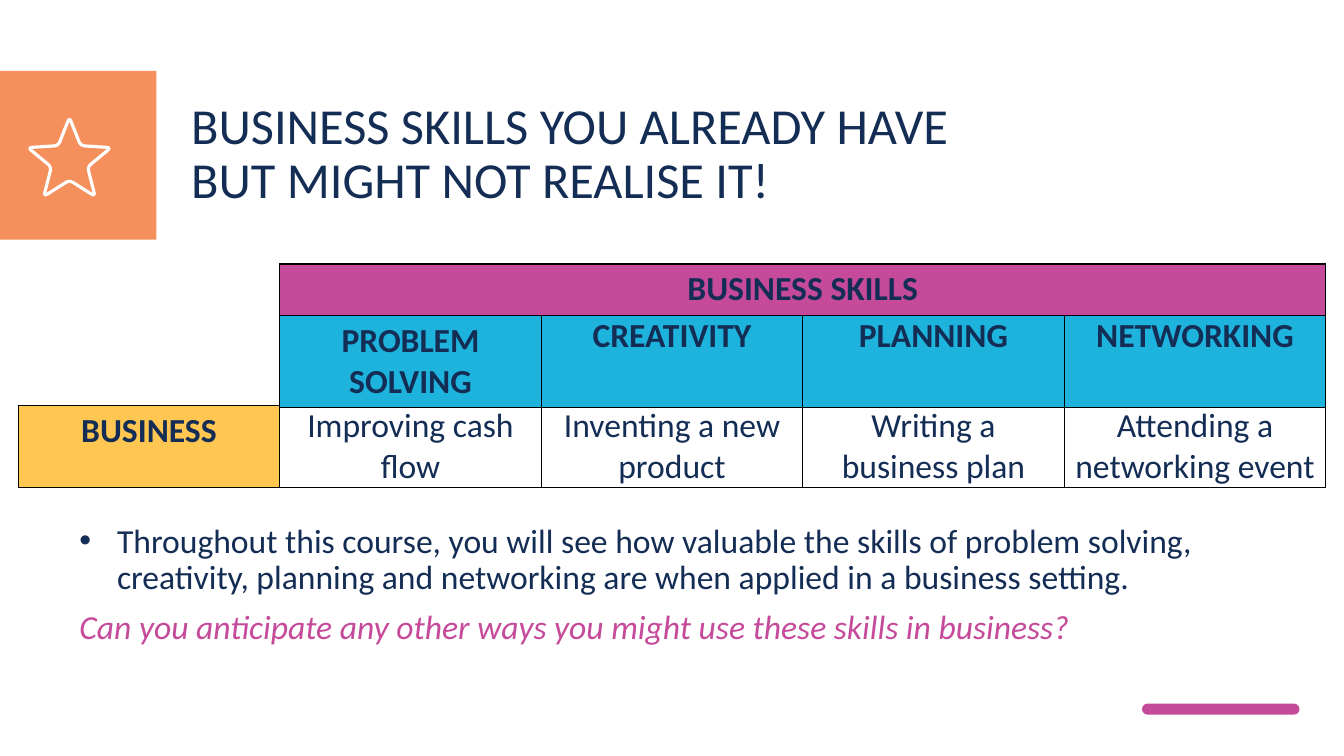
"""Build the slide on business skills you already have."""
from math import cos, pi, sin

from lxml import etree
from pptx import Presentation
from pptx.dml.color import RGBColor
from pptx.enum.shapes import MSO_SHAPE
from pptx.enum.text import PP_ALIGN
from pptx.oxml.ns import qn
from pptx.util import Cm, Pt

RECT, ROUND = MSO_SHAPE.RECTANGLE, MSO_SHAPE.ROUNDED_RECTANGLE
CENTER = PP_ALIGN.CENTER
NAVY, PINK, BLUE, YELLOW, ORANGE = "142D55", "C54A9A", "1EB3DD", "FFC652", "F26B27"
COL = 6.59


def color(text):
    return RGBColor.from_string(text)


def style(par, text, size, tint=NAVY):
    par.text = text
    font = par.font
    font.name, font.size = "Calibri", Pt(size)
    font.color.rgb = color(tint)


deck = Presentation()
deck.slide_width, deck.slide_height = Cm(33.87), Cm(19.05)
slide = deck.slides.add_slide(deck.slide_layouts[6])
shapes = slide.shapes

bars = []
for kind, tint, box in (
    (RECT, ORANGE, (-0.03, 1.79, 3.97, 4.25)),
    (ROUND, PINK, (28.78, 17.73, 3.97, 0.28)),
):
    bar = shapes.add_shape(kind, *map(Cm, box))
    bar.shadow.inherit = False
    bar.fill.solid()
    bar.fill.fore_color.rgb = color(tint)
    bar.line.fill.background()
    bars.append(bar)
bars[1].adjustments[0] = 0.5
tone = bars[0].fill._xPr.find(".//" + qn("a:srgbClr"))
etree.SubElement(tone, qn("a:alpha"), val="75000")

tips = []
for i in range(10):
    size, turn = (0.48 if i % 2 else 1.1), i * pi / 5
    tips.append((1.75 + size * sin(turn), 4.06 - size * cos(turn)))
curve = []
for i, tip in enumerate(tips):
    ends = [
        [0.85 * a + 0.15 * b for a, b in zip(tip, near)]
        for near in (tips[i - 1], tips[(i + 1) % 10])
    ]
    for step in range(7):
        t = step / 6
        curve.append(tuple(
            Cm((1 - t) ** 2 * a + 2 * t * (1 - t) * b + t * t * c)
            for a, b, c in zip(ends[0], tip, ends[1])
        ))
path = shapes.build_freeform(*curve[0])
path.add_line_segments(curve[1:], close=True)
star = path.convert_to_shape()
star.shadow.inherit = False
star.fill.background()
star.line.color.rgb = color("FFFFFF")
star.line.width = Pt(2.25)

SKILLS = ["PROBLEM SOLVING", "CREATIVITY", "PLANNING", "NETWORKING"]
USES = ["Improving cash flow", "Inventing a new product",
        "Writing a business plan", "Attending a networking event"]
grids = (
    (0.46, 10.21, [2.06], [["BUSINESS"] + USES], [[YELLOW] + [None] * 4]),
    (7.05, 6.65, [1.29, 2.32], [["BUSINESS SKILLS", "", "", ""], SKILLS],
     [[PINK] * 4, [BLUE] * 4]),
)
for left, top, highs, words, tints in grids:
    cols = len(words[0])
    frame = shapes.add_table(len(highs), cols, Cm(left), Cm(top),
                             Cm(COL * cols), Cm(sum(highs)))
    table = frame.table
    table.first_row = table.horz_banding = False
    for col in table.columns:
        col.width = Cm(COL)
    for r, high in enumerate(highs):
        table.rows[r].height = Cm(high)
        for c, (word, tint) in enumerate(zip(words[r], tints[r])):
            cell = table.cell(r, c)
            props = cell._tc.get_or_add_tcPr()
            for side in ("lnL", "lnR", "lnT", "lnB"):
                edge = etree.SubElement(props, qn("a:" + side), w="12700")
                ink = etree.SubElement(edge, qn("a:solidFill"))
                etree.SubElement(ink, qn("a:srgbClr"), val="000000")
            if tint:
                cell.fill.solid()
                cell.fill.fore_color.rgb = color(tint)
            else:
                cell.fill.background()
            if c:
                cell.margin_left = cell.margin_right = Cm(0.18)
                cell.margin_top = cell.margin_bottom = 0
            par = cell.text_frame.paragraphs[0]
            style(par, word, 24)
            par.alignment = CENTER
            par.font.bold = tint is not None
table.cell(0, 0).merge(table.cell(0, 3))

TITLE = "BUSINESS SKILLS YOU ALREADY HAVE BUT MIGHT NOT REALISE IT!"
POINT = ("Throughout this course, you will see how valuable the skills of problem "
         "solving, creativity, planning and networking are when applied in a "
         "business setting.")
ASK = "Can you anticipate any other ways you might use these skills in business?"
notes = (
    ((1.75, 13.08, 31.45, 4), [(POINT, 24, NAVY), (ASK, 24, PINK)]),
    ((4.57, 2.41, 19.81, 2.9), [(TITLE, 36, NAVY)]),
)
for box, lines in notes:
    body = shapes.add_textbox(*map(Cm, box)).text_frame
    body.word_wrap = True
    for i, (text, size, tint) in enumerate(lines):
        par = body.add_paragraph() if i else body.paragraphs[0]
        par.line_spacing = 0.9
        if i:
            par.space_before = Pt(10)
        if text == POINT:
            props = par._p.get_or_add_pPr()
            props.set("marL", str(Cm(0.95)))
            props.set("indent", str(-Cm(0.95)))
            etree.SubElement(props, qn("a:buFont"), typeface="Arial")
            etree.SubElement(props, qn("a:buChar"), char="•")
        style(par, text, size, tint)
        if text == ASK:
            par.font.italic = True

deck.save("out.pptx")
